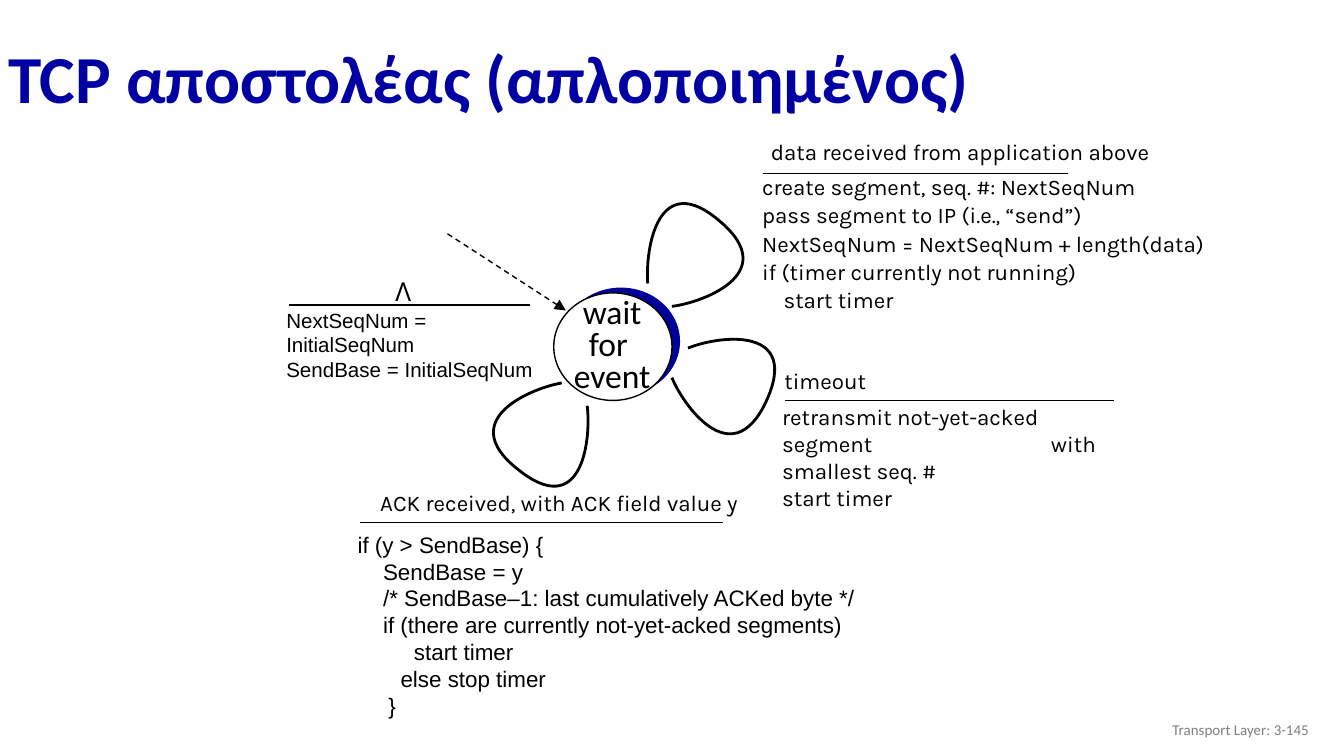
from lxml import etree
from pptx import Presentation
from pptx.dml.color import RGBColor
from pptx.enum import dml, shapes, text
from pptx.oxml.ns import qn
from pptx.util import Inches, Pt

COLORS = {"title": "0000A3", "shade": "000099", "ink": "000000",
          "paper": "FFFFFF", "footer": "7F7F7F"}
LEFT, CENTER, RIGHT = text.PP_ALIGN.LEFT, text.PP_ALIGN.CENTER, text.PP_ALIGN.RIGHT
TOP, MIDDLE = text.MSO_ANCHOR.TOP, text.MSO_ANCHOR.MIDDLE

# Each transition: event label, rule under it, then its actions.
# Lines are strings or (string, indent in inches).
TRANSITIONS = [
    {"event": ("data received from application above", (5.58, 0.99, 3.13, 0.39)),
     "rule": (5.68, 1.29, 7.95), "box": (5.6, 1.24, 3.52, 1.17),
     "font": "Karla", "size": 12, "spacing": 1.05,
     "lines": ["create segment, seq. #: NextSeqNum",
               "pass segment to IP (i.e., “send”)",
               "NextSeqNum = NextSeqNum + length(data)",
               "if (timer currently not running)",
               ("start timer", 0.16)]},
    {"event": ("timeout", (5.75, 2.69, 0.78, 0.39)),
     "rule": (5.84, 2.98, 8.29), "box": (5.75, 2.96, 2.73, 0.78),
     "font": "Karla", "size": 12, "tab": 2,
     "lines": ["retransmit not-yet-acked segment\twith smallest seq. #",
               "start timer"]},
    {"event": ("ACK received, with ACK field value y ", (2.62, 3.6, 3.12, 0.39)),
     "rule": (2.68, 3.89, 5.38), "box": (2.59, 3.91, 3.91, 1.56),
     "font": "Arial", "size": 12,
     "lines": ["if (y > SendBase) {",
               ("SendBase = y", 0.19),
               ("/* SendBase–1: last cumulatively ACKed byte */", 0.19),
               ("if (there are currently not-yet-acked segments)", 0.19),
               ("start timer", 0.42),
               ("else stop timer", 0.32),
               ("}", 0.23)]},
    {"event": ("Λ", (2.86, 2.01, 0.28, 0.31)),
     "event_font": "Open Sans", "event_size": 14,
     "rule": (2.15, 2.27, 3.94), "box": (2.06, 2.25, 2.09, 0.63),
     "font": "Arial", "size": 11,
     "lines": ["NextSeqNum = InitialSeqNum", "SendBase = InitialSeqNum"]},
]

# Self-loops: a start point, then two cubic curves of three points each
LOOPS = [
    [(4.82, 2.11), (4.8, 1.84), (4.9, 1.25), (5.36, 1.65),
     (5.83, 2.05), (5.19, 2.26), (5, 2.28)],
    [(5.12, 2.59), (5.37, 2.49), (5.96, 2.43), (5.7, 2.99),
     (5.44, 3.54), (5.07, 2.99), (5, 2.81)],
    [(4.37, 3.02), (4.4, 3.28), (4.33, 3.88), (3.85, 3.49),
     (3.37, 3.11), (3.99, 2.88), (4.18, 2.85)],
]


def rgb(name):
    return RGBColor.from_string(COLORS[name])


def fill_text(sp, lines, font, size, color="ink", bold=False, align=LEFT,
              anchor=TOP, spacing=None, tab=None):
    tf = sp.text_frame
    frame = {"word_wrap": True, "vertical_anchor": anchor,
             "margin_left": Inches(0.07), "margin_right": Inches(0.07),
             "margin_top": Inches(0.04), "margin_bottom": Inches(0.04)}
    for key, value in frame.items():
        setattr(tf, key, value)
    for i, line in enumerate(lines):
        words, indent = (line, 0) if isinstance(line, str) else line
        p = tf.add_paragraph() if i else tf.paragraphs[0]
        p.alignment, p.line_spacing = align, spacing
        r = p.add_run()
        r.text = words
        for key, value in {"name": font, "size": Pt(size), "bold": bold}.items():
            setattr(r.font, key, value)
        r.font.color.rgb = rgb(color)
        pPr = p._p.get_or_add_pPr()
        if indent:
            pPr.set("marL", str(Inches(indent)))
        if tab:
            tabs = etree.SubElement(pPr, qn("a:tabLst"))
            etree.SubElement(tabs, qn("a:tab"), pos=str(Inches(tab)), algn="l")


def add_text(s, box, lines, font, size, **style):
    sp = s.shapes.add_textbox(*map(Inches, box))
    fill_text(sp, lines, font, size, **style)


def add_title(s, words):
    sp = s.shapes.title
    sp.left, sp.top, sp.width, sp.height = map(Inches, (-0.01, 0.24, 9.34, 0.73))
    fill_text(sp, [words], "Calibri", 36, color="title", bold=True,
              anchor=MIDDLE, spacing=0.9)


def add_circle(s, left, top, fill, outlined):
    sp = s.shapes.add_shape(shapes.MSO_SHAPE.OVAL,
                            *map(Inches, (left, top, 0.88, 0.8)))
    sp.shadow.inherit = False
    sp.fill.solid()
    sp.fill.fore_color.rgb = rgb(fill)
    if outlined:
        sp.line.color.rgb = rgb("ink")
        sp.line.width = Pt(0.75)
    else:
        sp.line.fill.background()


def add_line(s, x1, y1, x2, y2):
    line = s.shapes.add_connector(shapes.MSO_CONNECTOR.STRAIGHT,
                                  *map(Inches, (x1, y1, x2, y2)))
    line.line.color.rgb = rgb("ink")
    line.line.width = Pt(0.75)
    etree.SubElement(line._element.spPr, qn("a:effectLst"))
    return line


def add_dashed_arrow(s, *ends):
    arrow = add_line(s, *ends)
    arrow.line.dash_style = dml.MSO_LINE.DASH
    etree.SubElement(arrow.line._get_or_add_ln(), qn("a:tailEnd"), type="triangle")


def add_loop(s, points):
    start, *rest = [(Inches(x), Inches(y)) for x, y in points]
    builder = s.shapes.build_freeform(*start)
    builder.add_line_segments(rest, close=False)
    sp = builder.convert_to_shape()
    sp.shadow.inherit = False
    sp.fill.background()
    sp.line.color.rgb = rgb("ink")
    sp.line.width = Pt(1.5)
    # Turn every three line segments into one cubic curve
    segments = list(sp._element.iter(qn("a:lnTo")))
    for i in range(0, len(segments), 3):
        curve = etree.Element(qn("a:cubicBezTo"))
        segments[i].addprevious(curve)
        for segment in segments[i:i + 3]:
            curve.append(segment[0])
            segment.getparent().remove(segment)


def add_transition(s, t):
    label, box = t["event"]
    add_text(s, t["box"], t["lines"], t["font"], t["size"],
             spacing=t.get("spacing"), tab=t.get("tab"))
    add_text(s, box, [label], t.get("event_font", "Karla"),
             t.get("event_size", 12), align=CENTER)
    x1, y, x2 = t["rule"]
    add_line(s, x1, y, x2, y)


def main():
    prs = Presentation()
    # Widescreen, 16:9
    prs.slide_width, prs.slide_height = Inches(10), Inches(10 * 9 / 16)
    s = prs.slides.add_slide(prs.slide_layouts[5])

    # Title and footer
    add_title(s, "TCP αποστολέας (απλοποιημένος)")
    add_text(s, (7.56, 5.28, 2.25, 0.3), ["Transport Layer: 3-145"], "Calibri", 8,
             color="footer", align=RIGHT, anchor=MIDDLE)

    # State with its initial arrow
    add_circle(s, 4.18, 2.14, "shade", outlined=False)
    add_circle(s, 4.12, 2.18, "paper", outlined=True)
    add_text(s, (4.19, 2.18, 0.73, 0.8), ["wait", "for ", "event"], "Calibri", 18,
             align=CENTER, spacing=0.8)
    add_dashed_arrow(s, 3.33, 1.74, 4.21, 2.31)

    # Transitions
    for t in TRANSITIONS:
        add_transition(s, t)
    for points in LOOPS:
        add_loop(s, points)

    prs.save("out.pptx")


if __name__ == "__main__":
    main()
